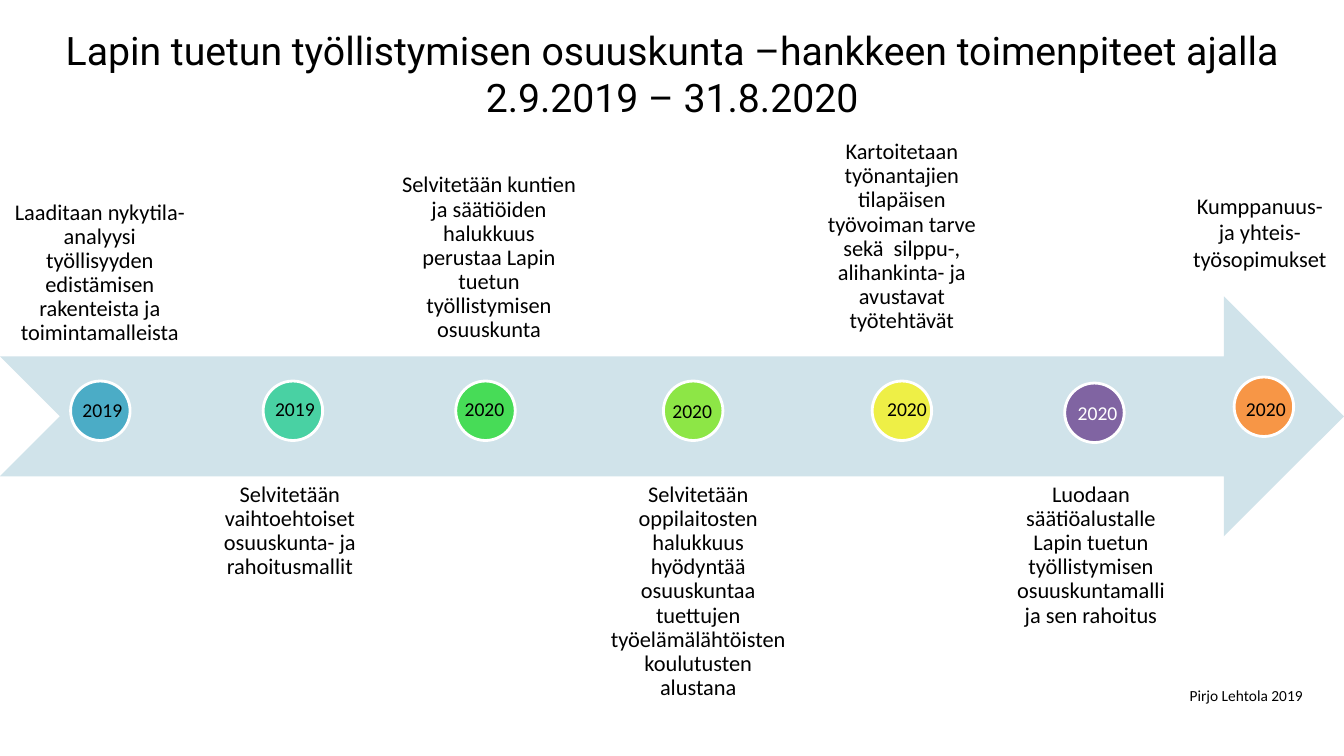
from dataclasses import dataclass

from pptx import Presentation
from pptx.dml.color import RGBColor
from pptx.enum.shapes import MSO_SHAPE as Preset
from pptx.enum.text import MSO_ANCHOR as Anchor, PP_ALIGN as Align
from pptx.util import Inches, Pt


@dataclass(frozen=True)
class Theme:
    title_font: str = "Roboto"
    body_font: str = "Calibri"
    title_size: int = 28
    text_size: int = 16
    year_size: int = 14
    credit_size: int = 11
    black: str = "000000"
    white: str = "FFFFFF"
    arrow: str = "D0E3EA"


@dataclass(frozen=True)
class Stage:
    """A step of the timeline: circle (left, top), year offset from it, text box."""
    year: str
    circle: tuple
    year_offset: tuple
    color: str
    text: str
    box: tuple
    above: bool
    year_color: str = Theme.black
    inset: float = 0.12
    spacing: float = 0.9


THEME = Theme()
CIRCLE_SIZE = 0.59
ABOVE_HEIGHT = 2.38
BELOW_TOP = 4.67

STAGES = [
    Stage("2019", (0.7, 3.78), (0.02, 0.12), "4BACC6",
          "Laaditaan nykytila-analyysi työllisyyden edistämisen rakenteista ja toimintamalleista",
          (0, 1.17, 1.98, ABOVE_HEIGHT), True),
    Stage("2019", (2.61, 3.78), (0.02, 0.11), "49D1A3",
          "Selvitetään vaihtoehtoiset osuuskunta- ja rahoitusmallit",
          (2.02, BELOW_TOP, 1.71, 2.38), False),
    Stage("2020", (4.52, 3.78), (-0.01, 0.11), "47DC57",
          "Selvitetään kuntien ja säätiöiden halukkuus perustaa Lapin tuetun "
          "työllistymisen osuuskunta",
          (3.86, 1.14, 1.98, ABOVE_HEIGHT), True),
    Stage("2020", (6.58, 3.78), (-0.01, 0.13), "8DE646",
          "Selvitetään oppilaitosten halukkuus hyödyntää osuuskuntaa tuettujen "
          "työelämälähtöisten koulutusten alustana",
          (5.92, BELOW_TOP, 2.01, 2.38), False),
    Stage("2020", (8.65, 3.78), (0.05, 0.11), "EEEF46",
          "Kartoitetaan työnantajien tilapäisen työvoiman tarve sekä  silppu-, "
          "alihankinta- ja avustavat työtehtävät",
          (7.96, 1.66, 1.97, 1.77), True),
    Stage("2020", (10.56, 3.8), (0.03, 0.13), "8064A2",
          "Luodaan säätiöalustalle Lapin tuetun työllistymisen osuuskuntamalli\nja sen rahoitus",
          (9.81, BELOW_TOP, 2.02, 2.38), False, year_color=THEME.white),
    Stage("2020", (12.24, 3.74), (0.02, 0.15), "F79646",
          "Kumppanuus- ja yhteis-työsopimukset",
          (11.7, 1.84, 1.59, 0.91), True, inset=0.1, spacing=1.0),
]


def add_text(slide, box, text, size, font=THEME.body_font, color=THEME.black,
             align=Align.LEFT, anchor=Anchor.TOP, inset=(0.1, 0.05), spacing=1.0):
    """Add a wrapped text box; inset is (sides, top and bottom)."""
    shape = slide.shapes.add_textbox(*map(Inches, box))
    frame = shape.text_frame
    frame.word_wrap = True
    frame.vertical_anchor = anchor
    frame.margin_left = frame.margin_right = Inches(inset[0])
    frame.margin_top = frame.margin_bottom = Inches(inset[1])
    paragraph = frame.paragraphs[0]
    paragraph.alignment = align
    paragraph.line_spacing = spacing
    for index, line in enumerate(text.split("\n")):
        if index:
            paragraph.add_line_break()
        run = paragraph.add_run()
        run.text = line
        run.font.name = font
        run.font.size = Pt(size)
        run.font.color.rgb = RGBColor.from_string(color)


def add_preset(slide, preset, box, fill, outline=None):
    shape = slide.shapes.add_shape(preset, *map(Inches, box))
    shape.shadow.inherit = False
    shape.fill.solid()
    shape.fill.fore_color.rgb = RGBColor.from_string(fill)
    if outline:
        shape.line.color.rgb = RGBColor.from_string(outline)
        shape.line.width = Pt(2)
    else:
        shape.line.fill.background()


def add_title(slide, box):
    add_text(slide, box,
             "Lapin tuetun työllistymisen osuuskunta –hankkeen toimenpiteet ajalla "
             "2.9.2019 – 31.8.2020",
             THEME.title_size, THEME.title_font, align=Align.CENTER, anchor=Anchor.MIDDLE)


def add_stage(slide, stage):
    left, top = stage.circle
    shift_x, shift_y = stage.year_offset
    add_preset(slide, Preset.OVAL, (left, top, CIRCLE_SIZE, CIRCLE_SIZE),
               stage.color, THEME.white)
    add_text(slide, (left + shift_x, top + shift_y, 0.63, 0.34), stage.year,
             THEME.year_size, color=stage.year_color)
    add_text(slide, stage.box, stage.text, THEME.text_size, align=Align.CENTER,
             anchor=Anchor.BOTTOM if stage.above else Anchor.TOP,
             inset=(stage.inset, min(stage.inset, 0.12) if stage.spacing < 1 else 0.05),
             spacing=stage.spacing)


def add_timeline(slide, box):
    add_preset(slide, Preset.NOTCHED_RIGHT_ARROW, box, THEME.arrow)
    for stage in STAGES:
        add_stage(slide, stage)


def main():
    presentation = Presentation()
    presentation.slide_width = Inches(13.33)
    presentation.slide_height = Inches(7.5)
    slide = presentation.slides.add_slide(presentation.slide_layouts[6])
    add_title(slide, (0, 0.1, 13.33, 1.25))
    add_timeline(slide, (0, 2.94, 13.33, 2.38))
    add_text(slide, (11.7, 6.76, 1.6, 0.29), "Pirjo Lehtola 2019", THEME.credit_size)
    presentation.save("out.pptx")


if __name__ == "__main__":
    main()
